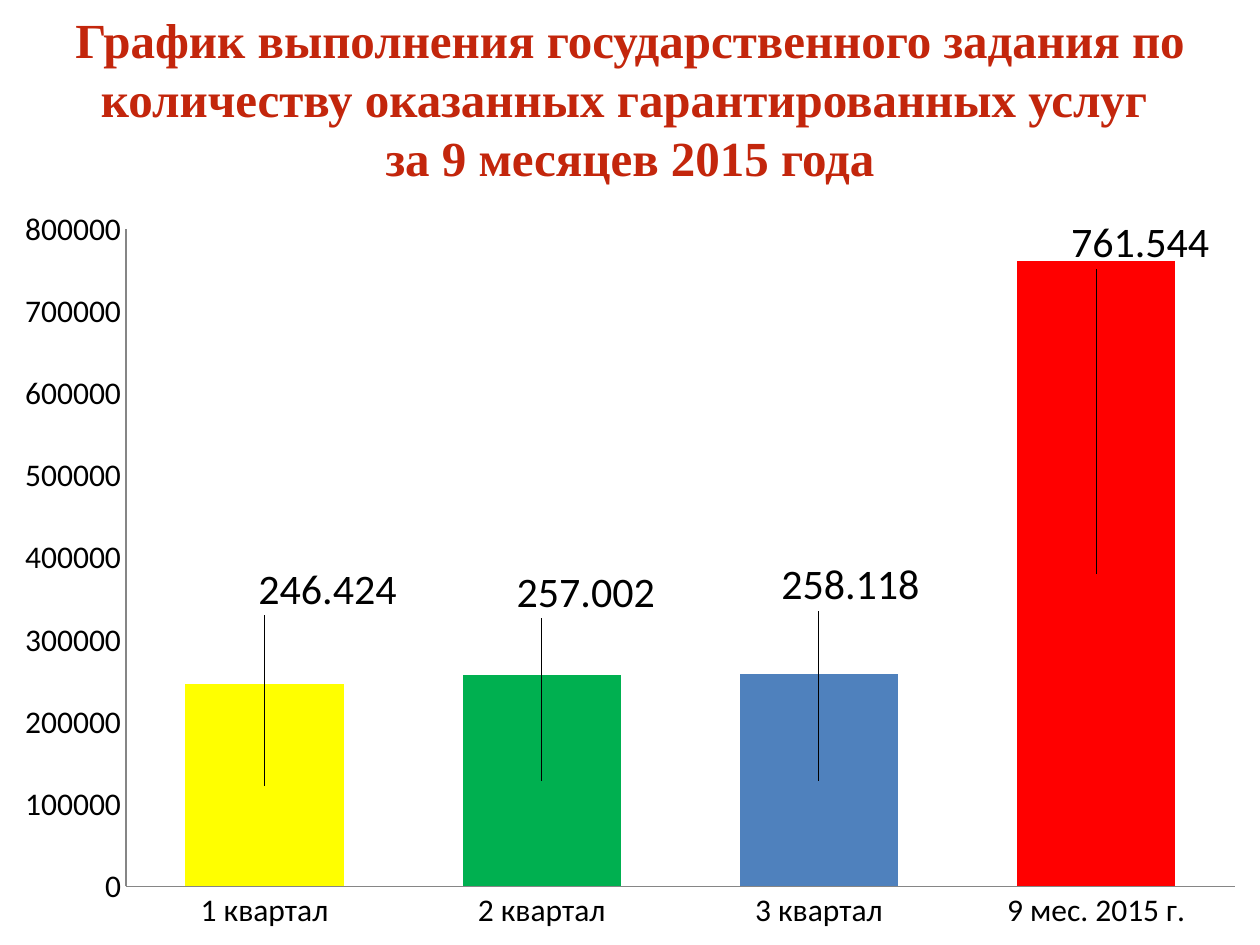
from lxml.etree import SubElement
from pptx import Presentation
from pptx.chart.data import CategoryChartData
from pptx.dml.color import RGBColor
from pptx.enum.chart import XL_CHART_TYPE, XL_TICK_MARK
from pptx.enum.text import MSO_ANCHOR, PP_ALIGN
from pptx.oxml.ns import qn
from pptx.util import Pt

TITLE = [
    "График выполнения государственного задания по количеству оказанных гарантированных услуг ",
    "за 9 месяцев 2015 года",
]
BLACK = RGBColor(0x00, 0x00, 0x00)
GREY = RGBColor(0x86, 0x86, 0x86)
CRIMSON = RGBColor(0xC3, 0x26, 0x0C)
YELLOW = RGBColor(0xFF, 0xFF, 0x00)
GREEN = RGBColor(0x00, 0xB0, 0x50)
BLUE = RGBColor(0x4F, 0x81, 0xBD)
RED = RGBColor(0xFF, 0x00, 0x00)

BARS = [
    ("1 квартал", 246424, "246.424", YELLOW, (0.05, -0.26)),
    ("2 квартал", 257002, "257.002", GREEN, (0.035, -0.25)),
    ("3 квартал", 258118, "258.118", BLUE, (0.025, -0.26)),
    ("9 мес. 2015 г.", 761544, "761.544", RED, (0.035, -0.44)),
]
PLOT_AREA = {"x": 0.1, "y": 0.045, "w": 0.88, "h": 0.877}
WIDTH, HEIGHT, TITLE_HEIGHT = 720, 540, 111.6


def write(tf, lines, *, size, font, color, bold=False):
    p = tf.paragraphs[0]
    p.alignment = PP_ALIGN.CENTER
    for i, line in enumerate(lines):
        if i:
            p.add_line_break()
        r = p.add_run()
        r.text = line
        r.font.size = Pt(size)
        r.font.name = font
        r.font.bold = bold
        r.font.color.rgb = color


def set_layout(layout, values):
    manual = SubElement(layout, qn("c:manualLayout"))
    for tag, value in values.items():
        SubElement(manual, qn(f"c:{tag}")).set("val", str(value))


def add_title(s):
    sp = s.shapes.add_textbox(0, 0, Pt(WIDTH), Pt(TITLE_HEIGHT))
    tf = sp.text_frame
    tf.word_wrap = True
    tf.vertical_anchor = MSO_ANCHOR.MIDDLE
    write(tf, TITLE, size=28, font="Times New Roman", color=CRIMSON, bold=True)


def add_bars(s):
    data = CategoryChartData()
    data.categories = [bar[0] for bar in BARS]
    data.add_series("Series 1", [bar[1] for bar in BARS])
    chart = s.shapes.add_chart(
        XL_CHART_TYPE.COLUMN_STACKED, 0, Pt(TITLE_HEIGHT),
        Pt(WIDTH), Pt(HEIGHT - TITLE_HEIGHT), data).chart
    chart.has_legend = False
    chart.has_title = False
    chart.font.size = Pt(18)
    chart.font.name = "Calibri"
    chart.font.color.rgb = BLACK

    for axis in (chart.category_axis, chart.value_axis):
        axis.major_tick_mark = XL_TICK_MARK.NONE
        axis.minor_tick_mark = XL_TICK_MARK.NONE
        axis.has_major_gridlines = False
        axis.format.line.color.rgb = GREY
    chart.value_axis.minimum_scale = 0
    chart.value_axis.maximum_scale = 800000
    chart.value_axis.major_unit = 100000
    chart.value_axis.tick_labels.number_format = "General"
    chart.value_axis.tick_labels.number_format_is_linked = False

    plot = chart.plots[0]
    plot.gap_width = 75
    plot.overlap = 100
    plot.vary_by_categories = False
    series = plot.series[0]
    series.format.fill.solid()
    series.format.fill.fore_color.rgb = RED
    series.data_labels.show_value = True
    for i, (_, _, label, color, _) in enumerate(BARS):
        point = series.points[i]
        point.format.fill.solid()
        point.format.fill.fore_color.rgb = color
        write(point.data_label.text_frame, [label], size=24, font="Calibri", color=BLACK)

    space = chart._chartSpace
    for label, (*_, (dx, dy)) in zip(space.xpath(".//c:dLbl"), BARS):
        layout = SubElement(label, qn("c:layout"))
        label.insert(1, layout)
        set_layout(layout, {"x": dx, "y": dy})

    area = space.xpath(".//c:plotArea")[0]
    for old in area.findall(qn("c:layout")):
        area.remove(old)
    layout = SubElement(area, qn("c:layout"))
    area.insert(0, layout)
    set_layout(layout, {"layoutTarget": "inner", "xMode": "edge", "yMode": "edge", **PLOT_AREA})


def main():
    prs = Presentation()
    prs.slide_width, prs.slide_height = Pt(WIDTH), Pt(HEIGHT)
    s = prs.slides.add_slide(prs.slide_layouts[6])
    add_title(s)
    add_bars(s)
    prs.save("out.pptx")


if __name__ == "__main__":
    main()
